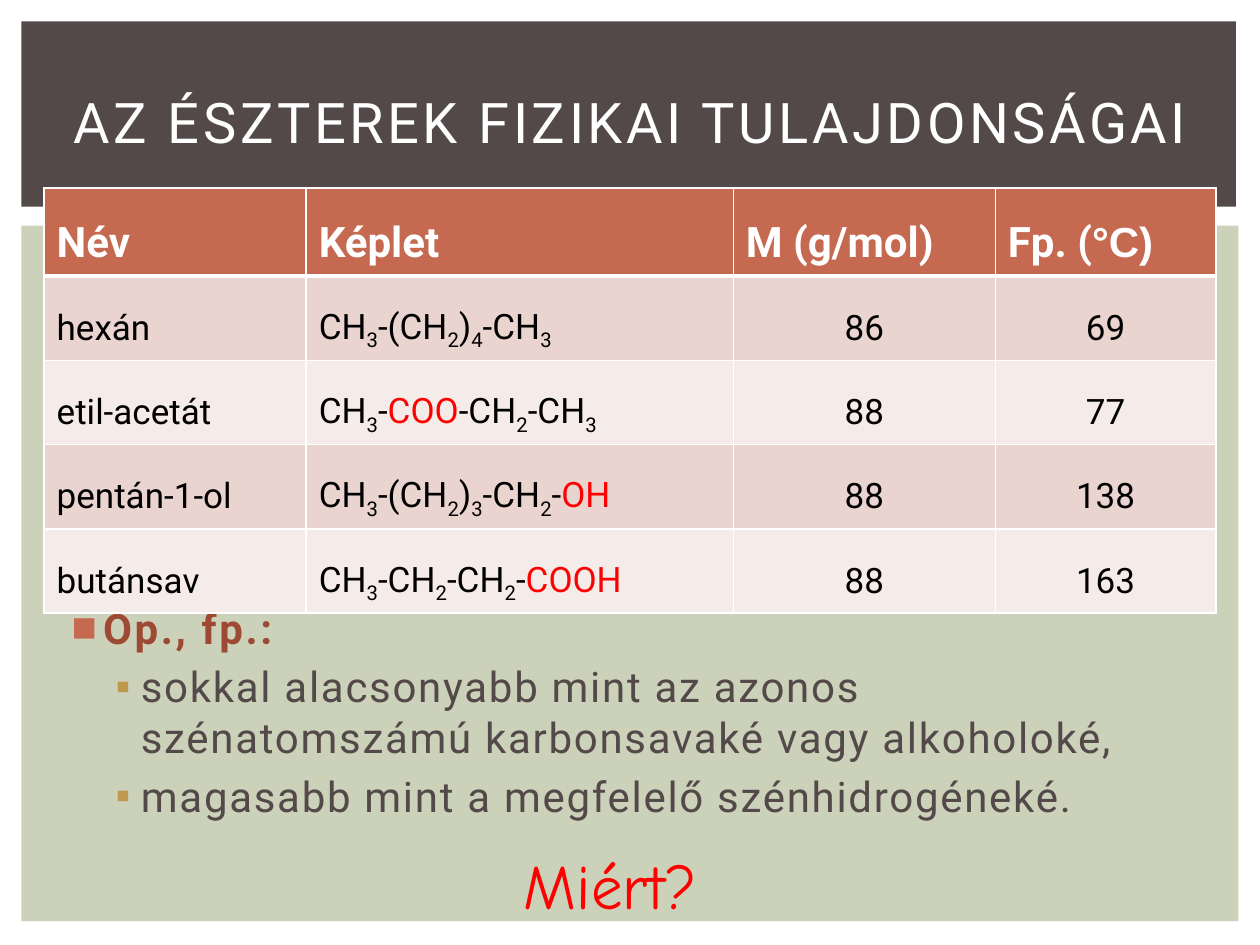
from dataclasses import dataclass, field
from itertools import groupby

from lxml import etree
from pptx import Presentation
from pptx.dml.color import RGBColor
from pptx.enum.shapes import MSO_SHAPE
from pptx.enum.text import MSO_ANCHOR, MSO_AUTO_SIZE, PP_ALIGN
from pptx.oxml.ns import qn
from pptx.util import Inches, Pt

RECTANGLE = MSO_SHAPE.RECTANGLE
TOP, MIDDLE = MSO_ANCHOR.TOP, MSO_ANCHOR.MIDDLE
LEFT, CENTER = PP_ALIGN.LEFT, PP_ALIGN.CENTER
FIT_SHAPE = MSO_AUTO_SIZE.SHAPE_TO_FIT_TEXT

WIDTH, HEIGHT = Inches(10), Inches(7.5)
WHITE, BLACK, RED = "FFFFFF", "000000", "FF0000"
BROWN, SAGE, RUST, GOLD = "534949", "CCD1B9", "C66951", "BF974D"
BANDS = ("EAD4D0", "F5EBE9")


@dataclass
class Box:
    left: float
    top: float
    width: float
    height: float

    def emu(self) -> tuple[int, int, int, int]:
        return (share(self.left, WIDTH), share(self.top, HEIGHT),
                share(self.width, WIDTH), share(self.height, HEIGHT))


@dataclass
class Style:
    size: float
    color: str
    name: str = "Roboto"
    bold: bool = False
    extras: dict[str, int] = field(default_factory=dict)


@dataclass
class Piece:
    text: str
    style: Style


@dataclass
class Point:
    text: str
    style: Style
    level: int
    indent: float
    hanging: float
    bullet: str
    bullet_color: str


@dataclass
class Compound:
    name: str
    formula: tuple[str, ...]
    molar_mass: str
    boiling_point: str


HEADING = Style(24, WHITE, bold=True)
DEGREE = Style(24, WHITE, "Arial", True)
ENTRY = Style(20, BLACK)
TITLE = Style(32, WHITE, extras={"spc": 200})
TOPIC = Style(24, "9E4934", bold=True, extras={"spc": 150})
DETAIL = Style(24, BROWN, extras={"spc": 100})
QUESTION = Style(36, RED, "Comic Neue")

PANELS = ((Box(1.7, 23.87, 96.6, 73.6), SAGE), (Box(1.7, 2.27, 96.4, 19.6), BROWN))
COLUMN_SHARES = (20.8, 33.9, 20.8, 17.5)
HEADINGS = (
    [Piece("Név", HEADING)],
    [Piece("Képlet", HEADING)],
    [Piece("M (g/mol)", HEADING)],
    [Piece("Fp. (", HEADING), Piece("°C)", DEGREE)],
)
COMPOUNDS = (
    Compound("hexán", ("CH3-(CH2)4-CH3",), "86", "69"),
    Compound("etil-acetát", ("CH3-", "COO", "-CH2-CH3"), "88", "77"),
    Compound("pentán-1-ol", ("CH3-(CH2)3-CH2-", "OH"), "88", "138"),
    Compound("butánsav", ("CH3-CH2-CH2-", "COOH"), "88", "163"),
)
POINTS = (
    Point("Op., fp.:", TOPIC, 0, 0.3, 0.25, "■", RUST),
    Point("sokkal alacsonyabb mint az azonos szénatomszámú karbonsavaké vagy alkoholoké,",
          DETAIL, 1, 0.6, 0.2, "▪", GOLD),
    Point("magasabb mint a megfelelő szénhidrogéneké.", DETAIL, 1, 0.6, 0.2, "▪", GOLD),
)


def share(percent: float, whole: int) -> int:
    return round(whole * percent / 100)


def rgb(value: str) -> RGBColor:
    return RGBColor.from_string(value)


def apply(target, values: dict) -> None:
    for attribute, value in values.items():
        setattr(target, attribute, value)


def paint(target, color: str) -> None:
    target.fill.solid()
    target.fill.fore_color.rgb = rgb(color)


def add_color(parent, color: str) -> None:
    etree.SubElement(parent, qn("a:srgbClr"), val=color)


def write(paragraph, pieces: list[Piece]) -> None:
    for piece in pieces:
        run, style = paragraph.add_run(), piece.style
        run.text = piece.text
        apply(run.font, {"size": Pt(style.size), "name": style.name, "bold": style.bold})
        run.font.color.rgb = rgb(style.color)
        for key, value in style.extras.items():
            run.font._element.set(key, str(value))


def formula_pieces(parts: tuple[str, ...]) -> list[Piece]:
    pieces = []
    for index, part in enumerate(parts):
        color = RED if index == 1 else BLACK
        for is_count, symbols in groupby(part, str.isdigit):
            extras = {"baseline": -25000} if is_count else {}
            pieces.append(Piece("".join(symbols), Style(ENTRY.size, color, extras=extras)))
    return pieces


def add_panel(slide, box: Box, color: str) -> None:
    panel = slide.shapes.add_shape(RECTANGLE, *box.emu())
    panel.shadow.inherit = False
    paint(panel, color)
    panel.line.fill.background()


def add_text_frame(slide, box: Box, values: dict):
    frame = slide.shapes.add_textbox(*box.emu()).text_frame
    apply(frame, values)
    return frame


def add_points(slide, box: Box, points: tuple[Point, ...]) -> None:
    frame = add_text_frame(slide, box, {"word_wrap": True})
    for index, point in enumerate(points):
        paragraph = frame.add_paragraph() if index else frame.paragraphs[0]
        apply(paragraph, {"level": point.level, "space_before": Pt(point.style.size * 0.2)})
        properties = paragraph._p.get_or_add_pPr()
        properties.set("marL", str(Inches(point.indent)))
        properties.set("indent", str(-Inches(point.hanging)))
        add_color(etree.SubElement(properties, qn("a:buClr")), point.bullet_color)
        etree.SubElement(properties, qn("a:buFont"), typeface="Arial")
        etree.SubElement(properties, qn("a:buChar"), char=point.bullet)
        write(paragraph, [Piece(point.text, point.style)])


def add_borders(cell, bottom: float, top: float) -> None:
    properties = cell._tc.get_or_add_tcPr()
    for side, width in (("L", 1), ("R", 1), ("T", top), ("B", bottom)):
        line = etree.SubElement(properties, qn(f"a:ln{side}"), w=str(Pt(width)))
        add_color(etree.SubElement(line, qn("a:solidFill")), WHITE)


def add_compound_table(slide, box: Box) -> None:
    rows = [HEADINGS] + [
        ([Piece(item.name, ENTRY)], formula_pieces(item.formula),
         [Piece(item.molar_mass, ENTRY)], [Piece(item.boiling_point, ENTRY)])
        for item in COMPOUNDS
    ]
    table = slide.shapes.add_table(len(rows), len(COLUMN_SHARES), *box.emu()).table
    table.horz_banding = False
    for column, percent in zip(table.columns, COLUMN_SHARES):
        column.width = share(percent, WIDTH)
    for row, entries in enumerate(rows):
        for column, pieces in enumerate(entries):
            cell = table.cell(row, column)
            add_borders(cell, 1 if row else 3, 3 if row == 1 else 1)
            paint(cell, BANDS[(row - 1) % 2] if row else RUST)
            cell.vertical_anchor = MIDDLE if row else TOP
            paragraph = cell.text_frame.paragraphs[0]
            apply(paragraph, {"line_spacing": 1.5,
                              "alignment": CENTER if row and column > 1 else LEFT})
            write(paragraph, pieces)


def main() -> None:
    deck = Presentation()
    apply(deck, {"slide_width": WIDTH, "slide_height": HEIGHT})
    slide = deck.slides.add_slide(deck.slide_layouts[6])
    for box, color in PANELS:
        add_panel(slide, box, color)
    add_points(slide, Box(4.2, 63.07, 91.9, 28.4), POINTS)
    title = add_text_frame(slide, Box(4.2, 5.2, 91.7, 15.33),
                           {"word_wrap": True, "vertical_anchor": MIDDLE})
    title.paragraphs[0].alignment = CENTER
    write(title.paragraphs[0], [Piece("AZ ÉSZTEREK FIZIKAI TULAJDONSÁGAI", TITLE)])
    add_compound_table(slide, Box(3.5, 19.87, 93, 41.33))
    question = add_text_frame(slide, Box(40.6, 88.93, 18.2, 9.47),
                              {"word_wrap": False, "auto_size": FIT_SHAPE})
    write(question.paragraphs[0], [Piece("Miért?", QUESTION)])
    deck.save("out.pptx")


if __name__ == "__main__":
    main()
